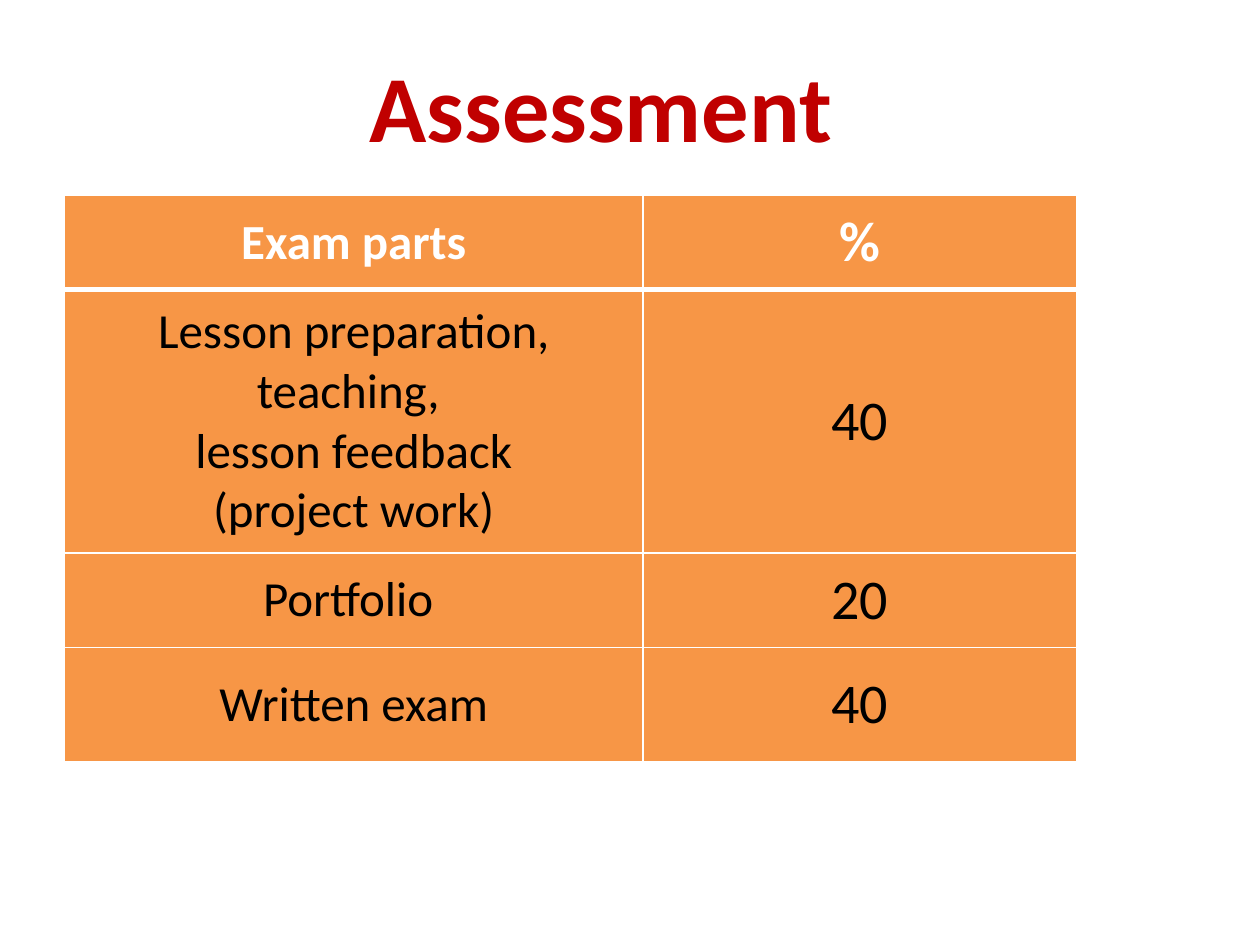
from dataclasses import dataclass
from lxml.etree import SubElement
from pptx import Presentation
from pptx.dml.color import RGBColor
from pptx.enum.text import MSO_ANCHOR, PP_ALIGN
from pptx.oxml.ns import qn
from pptx.util import Cm, Pt

TITLE = "Assessment"
ROWS = [
    ("Exam parts", "%"),
    ("Lesson preparation, teaching, \nlesson feedback\n(project work)", "40"),
    ("Portfolio ", "20"),
    ("Written exam", "40"),
]
WIDTHS = (11.66, 8.74)
HEIGHTS = (1.9, 5.31, 1.9, 2.31)


@dataclass(frozen=True)
class Theme:
    font: str = "Calibri"
    title: str = "C00000"
    fill: str = "F79646"
    head: str = "FFFFFF"
    body: str = "000000"
    line: str = "FFFFFF"
    big: int = 54
    sizes: tuple = (28, 32)
    thin: int = 1
    thick: int = 3


THEME = Theme()


def style(frame, size, color, bold):
    frame.vertical_anchor = MSO_ANCHOR.MIDDLE
    for para in frame.paragraphs:
        para.alignment = PP_ALIGN.CENTER
        for run in para.runs:
            font = run.font
            font.name, font.size, font.bold = THEME.font, Pt(size), bold
            font.color.rgb = RGBColor.from_string(color)


def border(cell, side, width):
    props = cell._tc.get_or_add_tcPr()
    line = SubElement(props, qn(f"a:ln{side}"), w=str(Pt(width)))
    fill = SubElement(line, qn("a:solidFill"))
    SubElement(fill, qn("a:srgbClr"), val=THEME.line)


def add_title(slide):
    title = slide.shapes.title
    title.left, title.top = Cm(6.3), Cm(1.12)
    title.width, title.height = Cm(11.63), Cm(2)
    title.text_frame.text = TITLE
    style(title.text_frame, THEME.big, THEME.title, True)


def add_grid(slide):
    grid = slide.shapes.add_table(
        len(ROWS), len(WIDTHS), Cm(1.3), Cm(3.94),
        Cm(sum(WIDTHS)), Cm(sum(HEIGHTS))).table
    for col, width in zip(grid.columns, WIDTHS):
        col.width = Cm(width)
    for row, height in zip(grid.rows, HEIGHTS):
        row.height = Cm(height)
    for r, texts in enumerate(ROWS):
        head = r == 0
        for c, text in enumerate(texts):
            cell = grid.cell(r, c)
            cell.text_frame.text = text
            style(cell.text_frame, THEME.sizes[c],
                  THEME.head if head else THEME.body, head)
            cell.vertical_anchor = MSO_ANCHOR.MIDDLE
            for side in "LRTB":
                thick = (r, side) in ((0, "B"), (1, "T"))
                border(cell, side, THEME.thick if thick else THEME.thin)
            cell.fill.solid()
            cell.fill.fore_color.rgb = RGBColor.from_string(THEME.fill)


def main():
    deck = Presentation()
    deck.slide_width, deck.slide_height = Cm(25.4), Cm(19.05)
    slide = deck.slides.add_slide(deck.slide_layouts[5])
    add_title(slide)
    add_grid(slide)
    deck.save("out.pptx")


if __name__ == "__main__":
    main()
